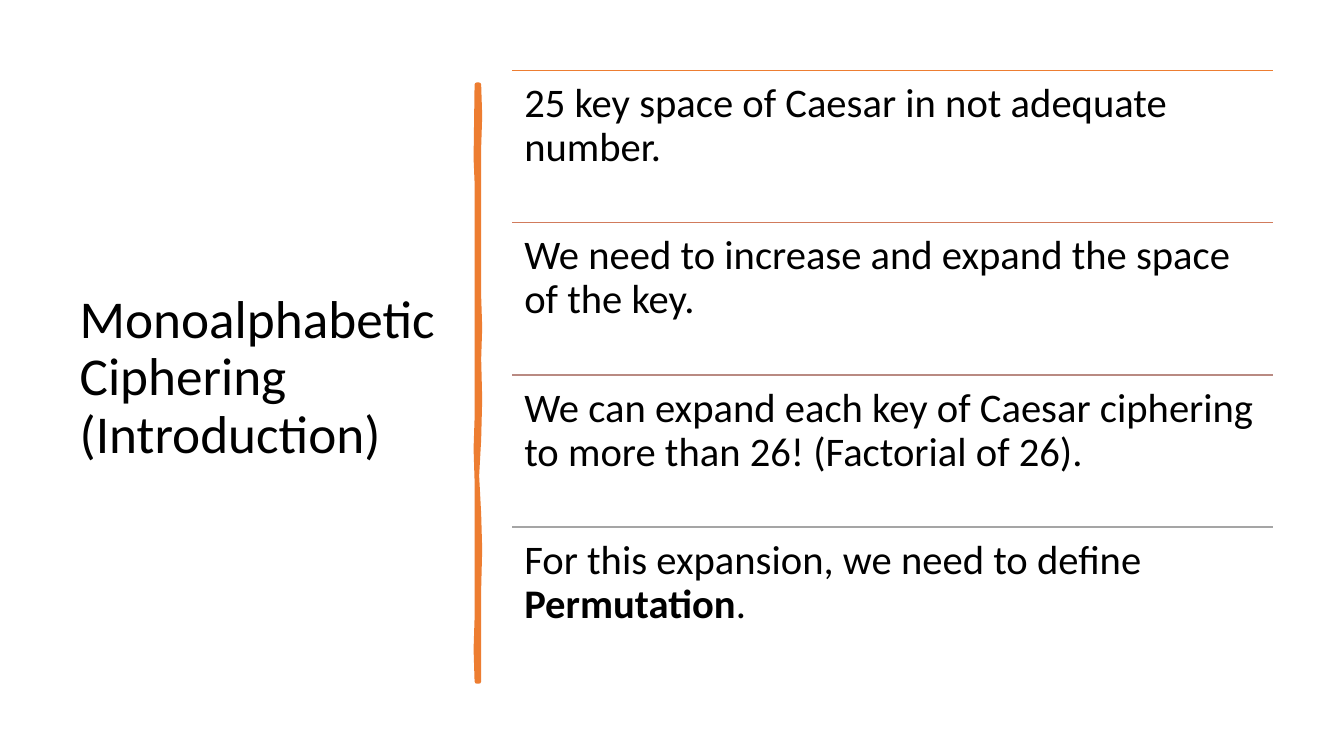
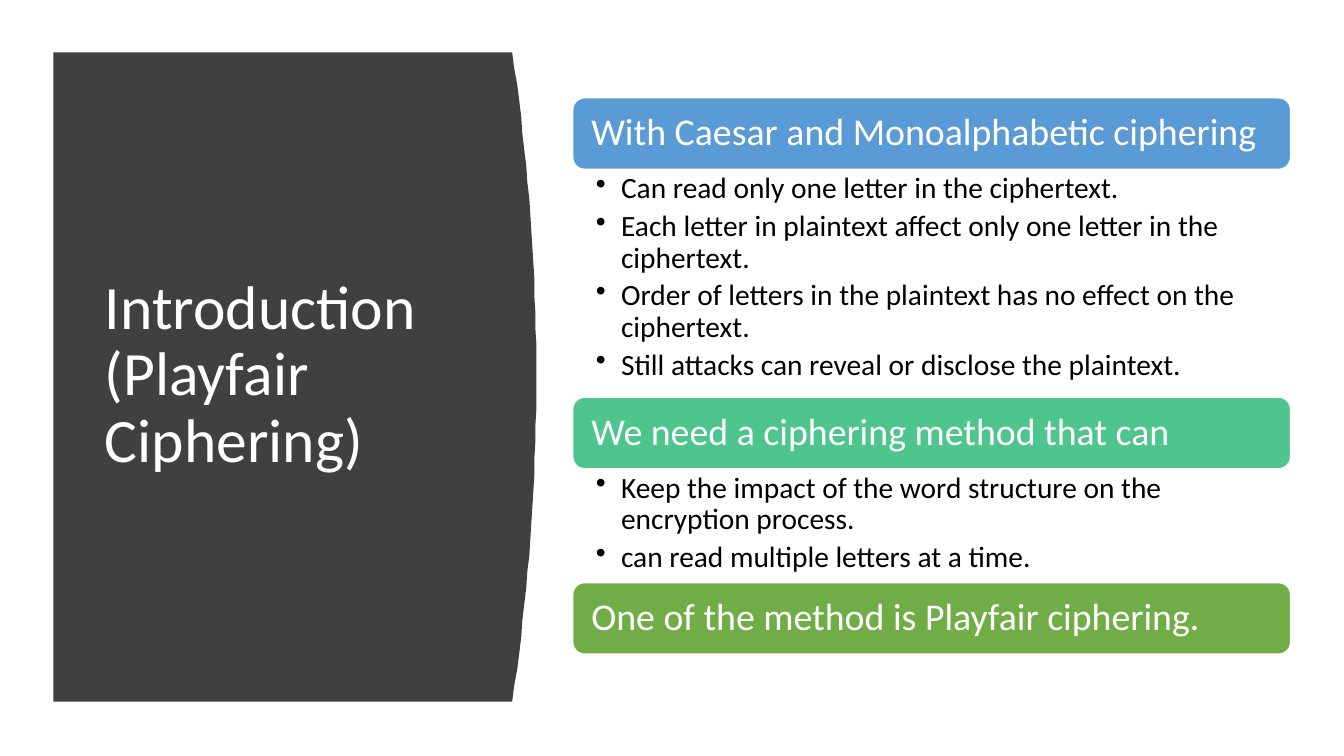
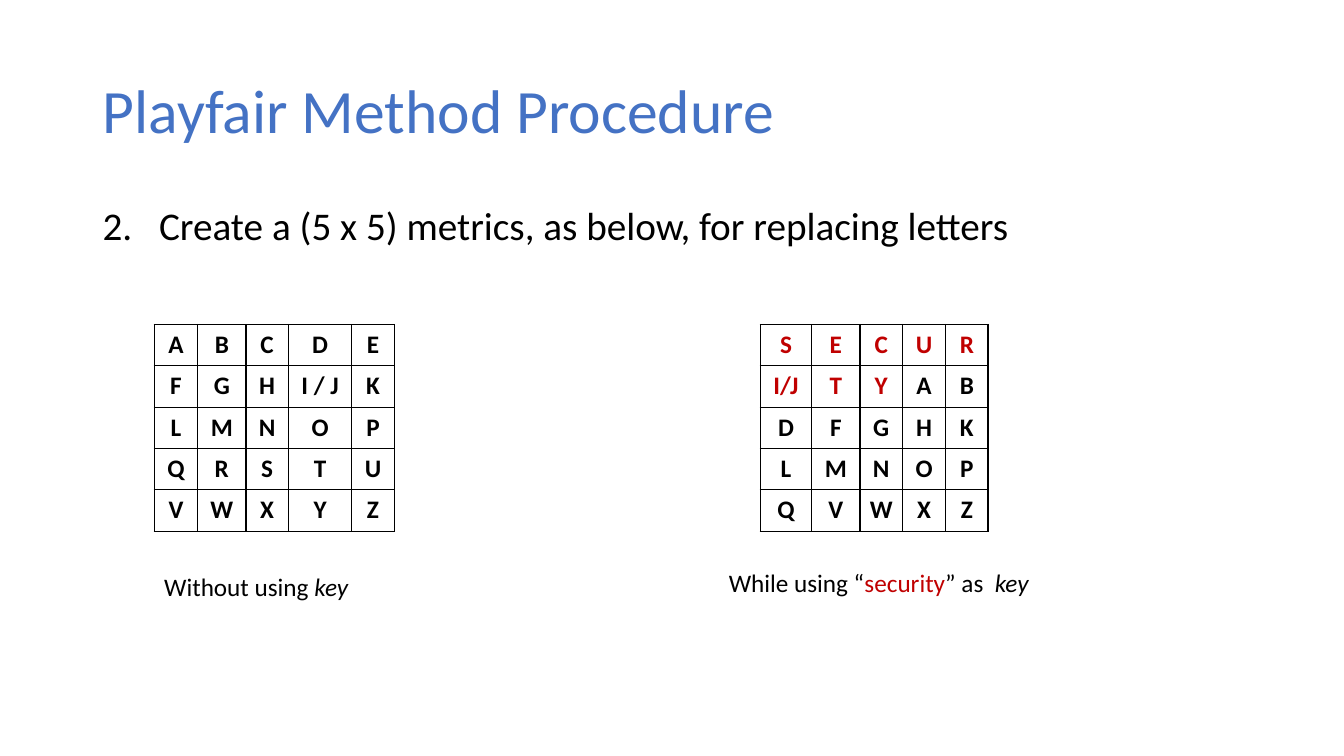
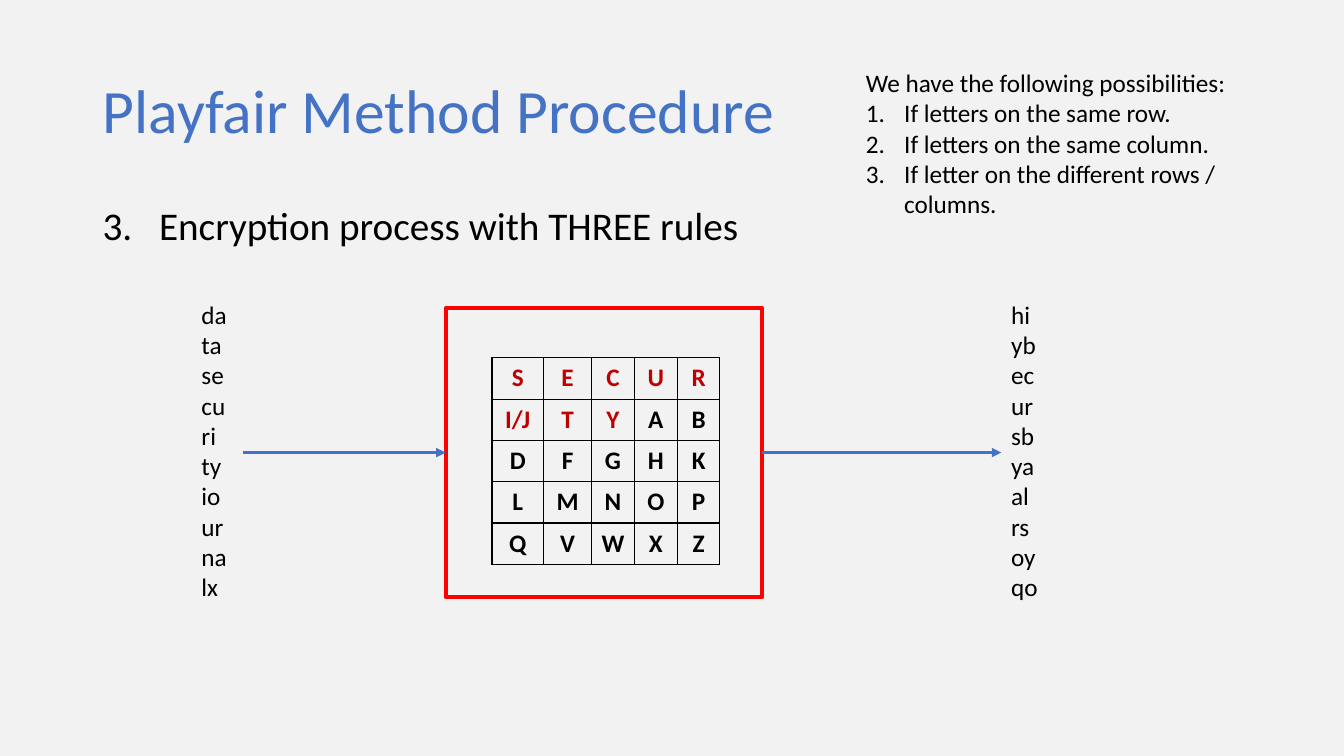
from lxml import etree
from pptx import Presentation
from pptx import util as u
from pptx.dml.color import RGBColor
from pptx.enum import shapes, text
from pptx.oxml import ns

# ---- Shared look ----
SCALE = 9144  # EMU in one px, 100 px to the inch
FONT = "Calibri"
BLACK, WHITE, GREY, PALE = "000000", "FFFFFF", "404040", "F2F2F2"
ORANGE, BLUE, RED, FRAME_RED = "ED7D31", "4472C4", "C00000", "FF0000"
LEFT, CENTER = text.PP_ALIGN.LEFT, text.PP_ALIGN.CENTER
TOP, MIDDLE = text.MSO_ANCHOR.TOP, text.MSO_ANCHOR.MIDDLE
INSETS = (10, 5, 10, 5)
PROCEDURE = "Playfair Method Procedure"

# ---- Content ----
REASONS = [  # rule colour, runs
    (ORANGE, ["25 key space of Caesar in not adequate number."]),
    ("D17B5C", ["We need to increase and expand the space of the key."]),
    ("B98A82", ["We can expand each key of Caesar ciphering to more than 26! "
                "(Factorial of 26)."]),
    ("A5A5A5", ["For this expansion, we need to define ",
                ("Permutation", {"bold": True}), "."]),
]
BAR_RIGHT = [(475, 84), (476, 115), (475, 146), (475, 226), (475, 294),
             (476, 325), (475, 356), (476, 396), (475, 436), (473, 472),
             (475, 510), (476, 545), (475, 584), (475, 676)]
BAR_LEFT = [(473, 676), (472, 644), (473, 613), (473, 557), (473, 477),
            (472, 445), (473, 415), (473, 335), (473, 250), (473, 181),
            (472, 157), (473, 84)]
SECTIONS = [  # header, header colour, height of the points, points
    ("With Caesar and Monoalphabetic ciphering", "5B9BD5", 226, [
        "Can read only one letter in the ciphertext.",
        "Each letter in plaintext affect only one letter in the ciphertext.",
        "Order of letters in the plaintext has no effect on the ciphertext.",
        "Still attacks can reveal or disclose the plaintext."]),
    ("We need a ciphering method that can", "4DC58D", 113, [
        "Keep the impact of the word structure on the encryption process.",
        "can read multiple letters at a time."]),
    ("One of the method is Playfair ciphering.", "70AD47", 0, []),
]
PLAIN_GRID = {"cols": [43, 48, 42, 63, 42], "key_cells": 0, "rows": [
    "A,B,C,D,E", "F,G,H,I / J,K", "L,M,N,O,P", "Q,R,S,T,U", "V,W,X,Y,Z"]}
KEYED_GRID = {"cols": [51, 48, 42, 43, 42], "key_cells": 8, "rows": [
    "S,E,C,U,R", "I/J,T,Y,A,B", "D,F,G,H,K", "L,M,N,O,P", "Q,V,W,X,Z"]}
KEY = ("key", {"italic": True})
PLAIN_CAPTION = ["Without using ", KEY]
KEYED_CAPTION = ["While using “", ("security", {"color": RED}), "” as  ", KEY]
POSSIBILITIES = ["We have the following possibilities:",
                 "If letters on the same row.",
                 "If letters on the same column.",
                 "If letter on the different rows / columns."]
PLAINTEXT = "da ta se cu ri ty io ur na lx".split()
CIPHERTEXT = "hi yb ec ur sb ya al rs oy qo".split()


# ---- Helpers ----
def px(n):
    return u.Emu(n * SCALE)


def box(*lengths):
    return [px(n) for n in lengths]


def rgb(color):
    return RGBColor.from_string(color)


def set_font(font, size=None, color=None, bold=None, italic=None):
    if size:
        font.size, font.name = u.Pt(size), FONT
    if color:
        font.color.rgb = rgb(color)
    if bold is not None:
        font.bold = bold
    if italic is not None:
        font.italic = italic


def write(tf, paragraphs, size, color=BLACK, bold=False, align=LEFT,
          anchor=TOP, insets=INSETS, spacing=1.0, before=0, after=0):
    """Fill a frame; a paragraph is a string or a list of runs."""
    tf.word_wrap, tf.auto_size = True, text.MSO_AUTO_SIZE.NONE
    tf.vertical_anchor = anchor
    tf.margin_left, tf.margin_top, tf.margin_right, tf.margin_bottom = box(*insets)
    for i, runs in enumerate(paragraphs):
        p = tf.add_paragraph() if i else tf.paragraphs[0]
        p.alignment, p.line_spacing = align, spacing
        p.space_before, p.space_after = u.Pt(before), u.Pt(after)
        set_font(p.font, size, color, bold)
        for run in [runs] if isinstance(runs, str) else runs:
            words, changes = (run, {}) if isinstance(run, str) else run
            r = p.add_run()
            r.text = words
            set_font(r.font, **changes)


def add_text(s, at, paragraphs, size, **style):
    tf = s.shapes.add_textbox(*box(*at)).text_frame
    write(tf, paragraphs, size, **style)
    return tf


def add_marker(p, indent, tag, **attributes):
    """Give a paragraph a bullet or a number with a hanging indent."""
    pPr = p._p.get_or_add_pPr()
    pPr.set("marL", str(px(indent)))
    pPr.set("indent", str(px(-indent)))
    marker = etree.Element(ns.qn(tag), attributes)
    pPr.insert_element_before(marker, "a:tabLst", "a:defRPr", "a:extLst")


def paint(sp, fill=None, line=None, width=1):
    sp.shadow.inherit = False
    if fill:
        sp.fill.solid()
        sp.fill.fore_color.rgb = rgb(fill)
    else:
        sp.fill.background()
    if line:
        sp.line.color.rgb, sp.line.width = rgb(line), u.Pt(width)
    else:
        sp.line.fill.background()


def add_outline(s, points, **look):
    builder = s.shapes.build_freeform(*points[0], scale=SCALE)
    builder.add_line_segments(points[1:])
    sp = builder.convert_to_shape()
    paint(sp, **look)
    return sp


def add_line(s, x1, x2, y, color, width, arrow=False):
    c = s.shapes.add_connector(shapes.MSO_CONNECTOR.STRAIGHT, *box(x1, y, x2, y))
    c.line.color.rgb, c.line.width = rgb(color), u.Pt(width)
    if arrow:
        etree.SubElement(c.line._get_or_add_ln(), ns.qn("a:tailEnd"), type="triangle")
    etree.SubElement(c._element.spPr, ns.qn("a:effectLst"))


def add_slide(title, at, size, color, background=WHITE):
    s = prs.slides.add_slide(prs.slide_layouts[5])
    s.background.fill.solid()
    s.background.fill.fore_color.rgb = rgb(background)
    sp = s.shapes.title
    sp.left, sp.top, sp.width, sp.height = box(*at)
    write(sp.text_frame, [title], size, color=color, anchor=MIDDLE, spacing=0.9)
    return s


def add_step(number, step, background=WHITE):
    """A procedure slide with its title and one numbered step."""
    s = add_slide(PROCEDURE, (92, 40, 1150, 145), 44, BLUE, background)
    tf = add_text(s, (92, 200, 1150, 476), [step], 28, spacing=0.9, before=10)
    add_marker(tf.paragraphs[0], 56, "a:buAutoNum",
               type="arabicPeriod", startAt=str(number))
    return s


def add_border(cell):
    tcPr = cell._tc.get_or_add_tcPr()
    for i, side in enumerate(("lnL", "lnR", "lnT", "lnB")):
        ln = etree.Element(ns.qn("a:" + side), w=str(u.Pt(1)))
        fill = etree.SubElement(ln, ns.qn("a:solidFill"))
        etree.SubElement(fill, ns.qn("a:srgbClr"), val=BLACK)
        tcPr.insert(i, ln)


def add_grid(s, left, top, grid, row_height=41):
    cols, rows = grid["cols"], grid["rows"]
    table = s.shapes.add_table(len(rows), len(cols), *box(
        left, top, sum(cols), row_height * len(rows))).table
    table.first_row = table.horz_banding = False
    for column, width in zip(table.columns, cols):
        column.width = px(width)
    for i, row in enumerate(rows):
        table.rows[i].height = px(row_height)
        for j, letter in enumerate(row.split(",")):
            cell = table.cell(i, j)
            cell.margin_left = cell.margin_right = px(5)
            cell.fill.background()
            add_border(cell)
            p = cell.text_frame.paragraphs[0]
            p.text, p.alignment = letter, CENTER
            in_key = i * len(cols) + j < grid["key_cells"]
            set_font(p.font, 18, RED if in_key else BLACK, True)


# ---- Slides ----
def monoalphabetic_slide():
    s = add_slide("Monoalphabetic Ciphering (Introduction)",
                  (69, 70, 374, 611), 38, BLACK)
    bar = add_outline(s, BAR_RIGHT + BAR_LEFT, fill=ORANGE, line=ORANGE, width=3.25)
    etree.SubElement(bar.line._get_or_add_ln(), ns.qn("a:round"))
    left, top, width, height = 508, 70, 755, 605
    for i, (color, runs) in enumerate(REASONS):
        y = top + i * height // len(REASONS)
        add_line(s, left, left + width, y, color, 1)
        add_text(s, (left, y, width, height // len(REASONS)), [runs], 29,
                 spacing=0.9, insets=(12, 12, 12, 12))


def playfair_slide():
    s = add_slide("Introduction (Playfair Ciphering)",
                  (94, 111, 374, 524), 44, WHITE)
    # Dark panel with a bulging right edge, behind the title
    left, right, top, bottom, bulge, steps = 53, 508, 52, 696, 24, 40
    edge = []
    for i in range(steps + 1):
        t = i / steps
        edge.append((right + bulge * 4 * t * (1 - t), top + (bottom - top) * t))
    panel = add_outline(s, [(left, top)] + edge + [(left, bottom)], fill=GREY)
    s.shapes.title._element.addprevious(panel._element)
    # Headers with their points stacked below
    left, width, y, header_height = 568, 712, 97, 71
    for header, color, height, points in SECTIONS:
        sp = s.shapes.add_shape(shapes.MSO_SHAPE.ROUNDED_RECTANGLE,
                                *box(left, y, width, header_height))
        paint(sp, fill=color, line=WHITE)
        write(sp.text_frame, [header], 27, color=WHITE, anchor=MIDDLE,
              spacing=0.9, insets=(15, 11, 15, 11))
        y += header_height
        if points:
            tf = add_text(s, (left, y, width, height), points, 21,
                          spacing=0.9, after=4.2, insets=(23, 4, 21, 4))
            for p in tf.paragraphs:
                add_marker(p, 25, "a:buChar", char="•")
        y += height


def matrix_slide():
    s = add_step(2, "Create a (5 x 5) metrics, as below, for replacing letters")
    add_grid(s, 153, 322, PLAIN_GRID)
    add_grid(s, 754, 322, KEYED_GRID)
    add_text(s, (153, 562, 239, 40), [PLAIN_CAPTION], 18)
    add_text(s, (686, 558, 371, 40), [KEYED_CAPTION], 18, align=CENTER)


def encryption_slide():
    s = add_step(3, "Encryption process with THREE rules", PALE)
    add_grid(s, 488, 355, KEYED_GRID)
    left, top, width, height = 442, 306, 314, 286
    frame = s.shapes.add_shape(shapes.MSO_SHAPE.RECTANGLE,
                               *box(left, top, width, height))
    paint(frame, line=FRAME_RED, width=3)
    tf = add_text(s, (849, 62, 420, 162), POSSIBILITIES, 18)
    for p in tf.paragraphs[1:]:
        add_marker(p, 38, "a:buAutoNum", type="arabicPeriod")
    # Letter pairs going in and coming out
    pairs_in, pairs_out, pairs_width = 190, 993, 51
    for x, pairs in ((pairs_in, PLAINTEXT), (pairs_out, CIPHERTEXT)):
        add_text(s, (x, 292, pairs_width, 313), pairs, 18)
    middle = top + height // 2
    for x1, x2 in ((pairs_in + pairs_width, left), (left + width, pairs_out)):
        add_line(s, x1, x2, middle, BLUE, 2.25, arrow=True)


prs = Presentation()
prs.slide_width, prs.slide_height = box(1333, 750)
monoalphabetic_slide()
playfair_slide()
matrix_slide()
encryption_slide()
prs.save("out.pptx")
